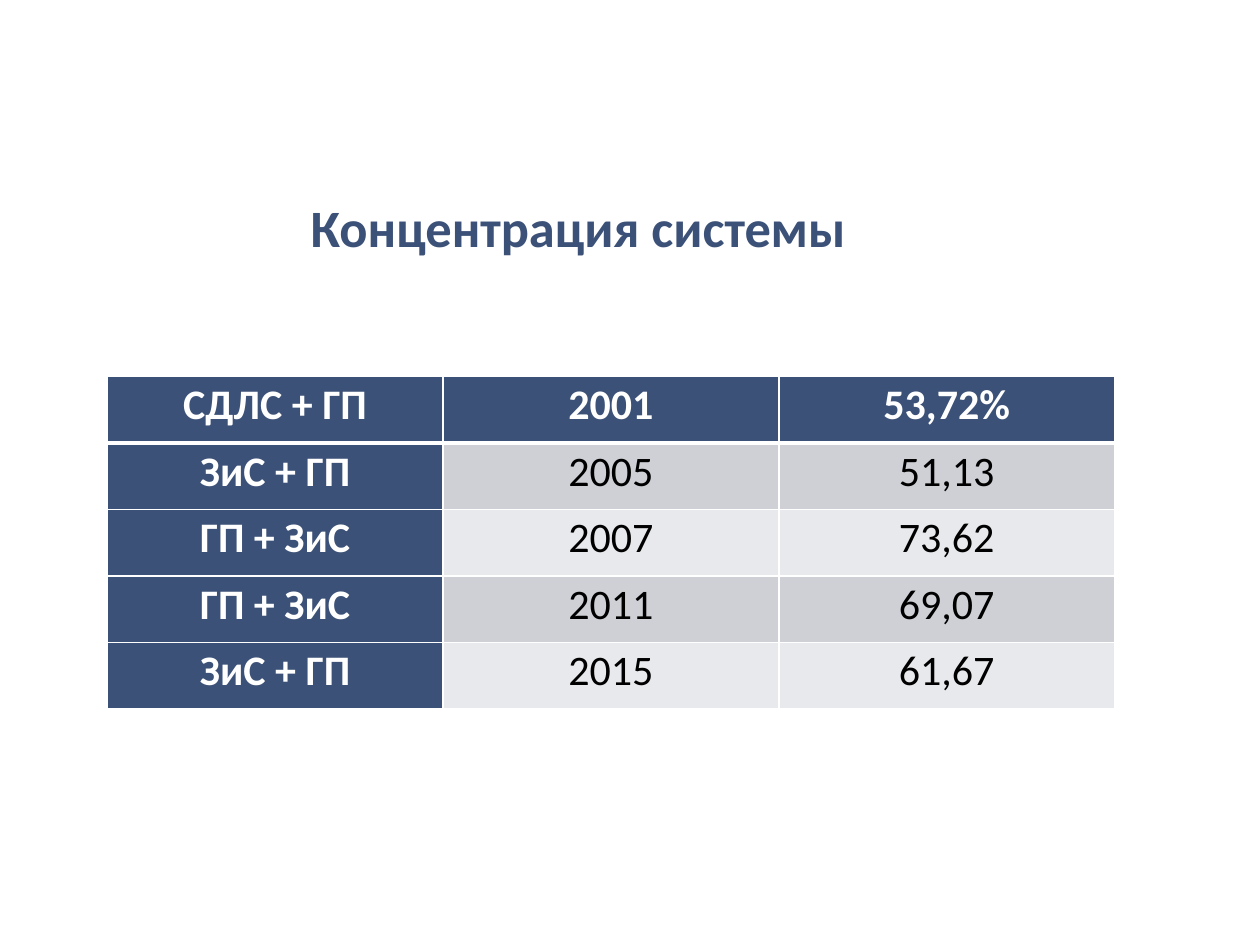
import pptx
import pptx.dml.color
import pptx.enum.text
import pptx.oxml
import pptx.oxml.ns
import pptx.util
from pptx.util import Cm

NAVY = pptx.dml.color.RGBColor(0x3C, 0x51, 0x77)
DARK_BAND = pptx.dml.color.RGBColor(0xCE, 0xD0, 0xD6)
LIGHT_BAND = pptx.dml.color.RGBColor(0xE8, 0xE9, 0xEC)
WHITE = pptx.dml.color.RGBColor(0xFF, 0xFF, 0xFF)
BLACK = pptx.dml.color.RGBColor(0, 0, 0)

TITLE = "Концентрация системы"
CONCENTRATION = [
    ("СДЛС + ГП", "2001", "53,72%"),
    ("ЗиС + ГП", "2005", "51,13"),
    ("ГП + ЗиС", "2007", "73,62"),
    ("ГП + ЗиС", "2011", "69,07"),
    ("ЗиС + ГП", "2015", "61,67"),
]

LEFT = Cm(2.16)
COLUMN_WIDTH = Cm(6.77)
ROW_HEIGHT = Cm(1.34)


def format_text(paragraph, size, color, bold):
    paragraph.alignment = pptx.enum.text.PP_ALIGN.CENTER
    for run in paragraph.runs:
        run.font.name = "Calibri"
        run.font.size = pptx.util.Pt(size)
        run.font.bold = bold
        run.font.color.rgb = color


def add_border(cell, side, points):
    cell._tc.get_or_add_tcPr().append(pptx.oxml.parse_xml(
        f'<a:ln{side} {pptx.oxml.ns.nsdecls("a")} w="{pptx.util.Pt(points)}">'
        f'<a:solidFill><a:srgbClr val="{WHITE}"/></a:solidFill></a:ln{side}>'))


def format_cell(cell, text, row, column):
    heading = row == 0 or column == 0
    cell.text_frame.text = text
    cell.margin_left = cell.margin_right = Cm(0.18)
    cell.margin_top = cell.margin_bottom = 0
    paragraph = cell.text_frame.paragraphs[0]
    paragraph.line_spacing = 1.07
    format_text(paragraph, 24, WHITE if heading else BLACK, heading)

    # The line under the header row is thicker than the rest
    widths = {"L": 1, "R": 1, "T": 3 if row == 1 else 1, "B": 3 if row == 0 else 1}
    for side, points in widths.items():
        add_border(cell, side, points)
    cell.fill.solid()
    band = DARK_BAND if row % 2 else LIGHT_BAND
    cell.fill.fore_color.rgb = NAVY if heading else band


presentation = pptx.Presentation()
presentation.slide_width = Cm(25.4)
presentation.slide_height = Cm(19.05)
slide = presentation.slides.add_slide(presentation.slide_layouts[6])

# Title
title = slide.shapes.add_textbox(LEFT, Cm(3.73), Cm(19), Cm(2.06)).text_frame
title.word_wrap = True
title.margin_top = Cm(0.2)
title.text = TITLE
format_text(title.paragraphs[0], 30, NAVY, True)

# Concentration table
row_count, column_count = len(CONCENTRATION), len(CONCENTRATION[0])
table = slide.shapes.add_table(
    row_count, column_count, LEFT, Cm(7.59),
    COLUMN_WIDTH * column_count, ROW_HEIGHT * row_count).table
table.first_col = True
for table_column in table.columns:
    table_column.width = COLUMN_WIDTH
for row, values in enumerate(CONCENTRATION):
    table.rows[row].height = ROW_HEIGHT
    for column, value in enumerate(values):
        format_cell(table.cell(row, column), value, row, column)

presentation.save("out.pptx")
